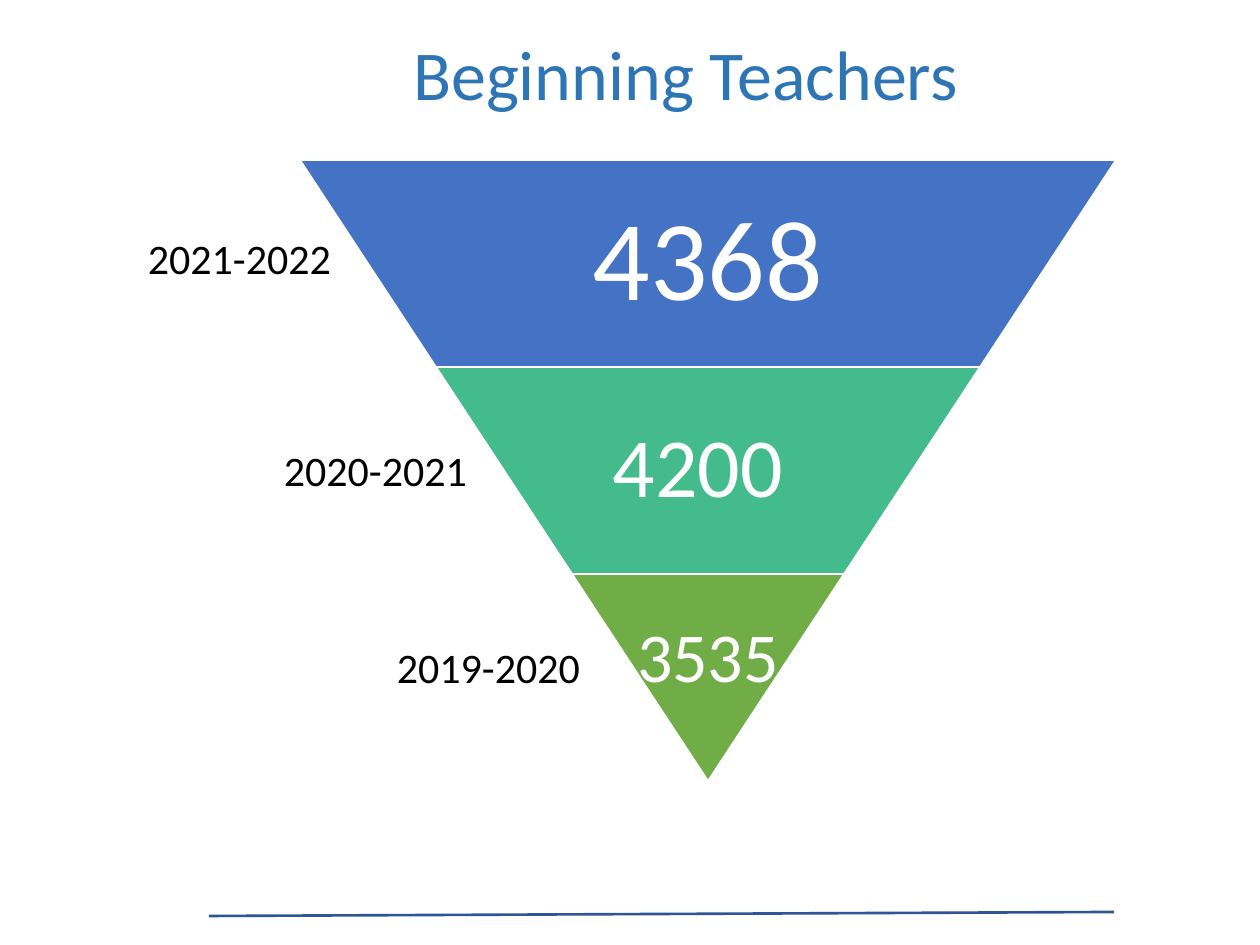
from lxml.etree import SubElement
from pptx import Presentation
from pptx.dml.color import RGBColor
from pptx.enum.shapes import MSO_CONNECTOR as Connector, MSO_SHAPE as Shape
from pptx.enum.text import MSO_ANCHOR as Anchor, PP_ALIGN as Align
from pptx.oxml.ns import qn
from pptx.util import Pt

EMU_PER_PX = 914400 / 126
FONT = "Calibri"
WHITE, BLACK = "FFFFFF", "000000"
TITLE_BLUE, RULE_BLUE = "2E75B6", "2F5597"

# Inverted pyramid: each band loses one inset on either side
PYRAMID_LEFT, PYRAMID_TOP = 300, 160
BAND_HEIGHT, BAND_INSET = 207, 136
LABEL_WIDTH, LABEL_HEIGHT = 227, 63

# value, size, fill, value shift (x, y), year, label position (left, top)
BANDS = [
    ("4368", 65, "4472C4", (0, 0), "2021-2022", (126, 226)),
    ("4200", 48, "43BB8D", (-10, 0), "2020-2021", (262, 438)),
    ("3535", 40, "70AD47", (0, -18), "2019-2020", (375, 635)),
]


def px(*lengths):
    return [round(length * EMU_PER_PX) for length in lengths]


def color(hex_value):
    return RGBColor.from_string(hex_value)


def write(shape, text, size, hex_value, line_spacing=1.0):
    frame = shape.text_frame
    frame.text = text
    frame.word_wrap = True
    frame.vertical_anchor = Anchor.MIDDLE
    paragraph = frame.paragraphs[0]
    paragraph.alignment = Align.CENTER
    paragraph.line_spacing = line_spacing
    font = paragraph.runs[0].font
    font.name, font.size = FONT, Pt(size)
    font.color.rgb = color(hex_value)


def add_title(slide, text):
    title = slide.shapes.title
    title.left, title.top, title.width, title.height = px(300, 24, 771, 97)
    write(title, text, 40, TITLE_BLUE)


def add_text(slide, text, box, size, hex_value, line_spacing=1.0):
    shape = slide.shapes.add_textbox(*px(*box))
    write(shape, text, size, hex_value, line_spacing)


def add_band(slide, box, fill):
    band = slide.shapes.add_shape(Shape.TRAPEZOID, *px(*box))
    band.rotation = 180
    band.adjustments[0] = BAND_INSET / BAND_HEIGHT
    band.shadow.inherit = False
    band.fill.solid()
    band.fill.fore_color.rgb = color(fill)
    band.line.color.rgb = color(WHITE)
    band.line.width = Pt(1)


def add_rule(slide, start, end):
    rule = slide.shapes.add_connector(Connector.STRAIGHT, *px(*start, *end))
    rule.line.color.rgb = color(RULE_BLUE)
    rule.line.width = Pt(1.5)
    SubElement(rule._element.spPr, qn("a:effectLst"))


def main():
    presentation = Presentation()
    presentation.slide_width, presentation.slide_height = px(1260, 945)
    slide = presentation.slides.add_slide(presentation.slide_layouts[5])

    # Footer rule and title
    add_rule(slide, (209, 916), (1114, 912))
    add_title(slide, "Beginning Teachers")

    # Pyramid bands with their values and school years
    for index, (value, size, fill, shift, year, position) in enumerate(BANDS):
        left = PYRAMID_LEFT + index * BAND_INSET
        top = PYRAMID_TOP + index * BAND_HEIGHT
        width = 2 * BAND_INSET * (len(BANDS) - index)
        add_band(slide, (left, top, width, BAND_HEIGHT), fill)
        value_box = (left + shift[0], top + shift[1], width, BAND_HEIGHT)
        add_text(slide, value, value_box, size, WHITE, 0.9)
        add_text(slide, year, (*position, LABEL_WIDTH, LABEL_HEIGHT), 24, BLACK)

    presentation.save("out.pptx")


if __name__ == "__main__":
    main()
